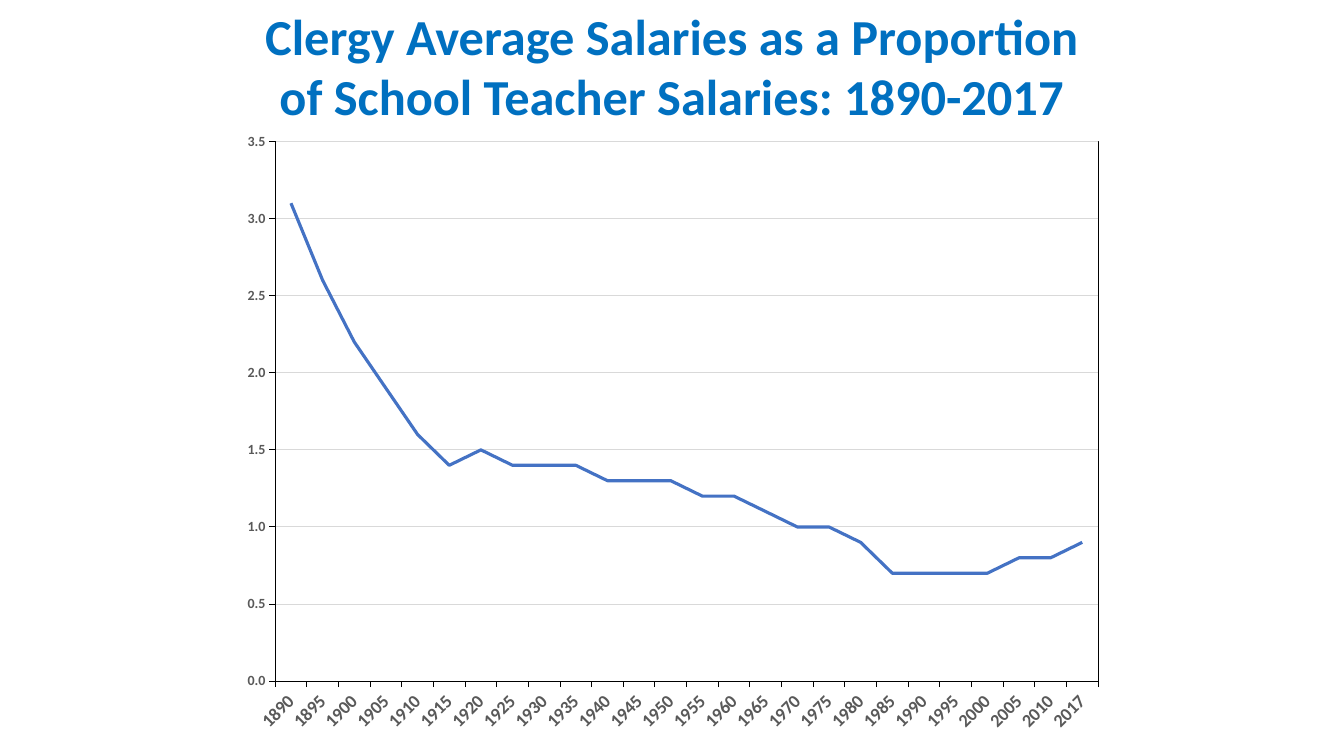
from lxml import etree
from pptx import Presentation
from pptx.chart.data import CategoryChartData
from pptx.dml.color import RGBColor
from pptx.enum.chart import XL_CHART_TYPE, XL_MARKER_STYLE, XL_TICK_MARK
from pptx.enum.text import MSO_ANCHOR, MSO_AUTO_SIZE, PP_ALIGN
from pptx.oxml import parse_xml
from pptx.util import Inches, Pt

LINE_CHART = XL_CHART_TYPE.LINE
NO_MARKER = XL_MARKER_STYLE.NONE
TICK_OUT, TICK_NONE = XL_TICK_MARK.OUTSIDE, XL_TICK_MARK.NONE
CENTER, TOP = PP_ALIGN.CENTER, MSO_ANCHOR.TOP
NO_FIT = MSO_AUTO_SIZE.NONE

TITLE_LINES = ["Clergy Average Salaries as a Proportion",
               "of School Teacher Salaries: 1890-2017"]
YEARS = [str(year) for year in range(1890, 2011, 5)] + ["2017"]
RATIOS = [3.1, 2.6, 2.2, 1.9, 1.6, 1.4, 1.5, 1.4, 1.4, 1.4, 1.3, 1.3, 1.3,
          1.2, 1.2, 1.1, 1.0, 1.0, 0.9, 0.7, 0.7, 0.7, 0.7, 0.8, 0.8, 0.9]

FONT = "Calibri"
TITLE_COLOR, LABEL_COLOR = "0070C0", "595959"
SERIES_COLOR, AXIS_COLOR, GRID_COLOR = "4472C4", "000000", "D9D9D9"
WIDTH, HEIGHT = 13.33, 7.5
LEFT, CHART_TOP = 2.24, 1.32
TITLE_WIDTH, CHART_WIDTH, CHART_HEIGHT = 8.85, 8.73, 6.03
PLOT_SHARES = {"x": 0.056, "y": 0.014, "w": 0.935, "h": 0.888}
AUTO_ROTATION = "-60000000"

CHART_NS = "http://schemas.openxmlformats.org/drawingml/2006/chart"
DRAW_NS = "http://schemas.openxmlformats.org/drawingml/2006/main"


def rgb(color):
    return RGBColor.from_string(color)


def style_font(font, size, color, bold=True):
    font.name, font.size, font.bold = FONT, Pt(size), bold
    font.color.rgb = rgb(color)


def style_line(line, color, width=0.75):
    line.color.rgb, line.width = rgb(color), Pt(width)


def write_lines(frame, lines, size, color, align=CENTER):
    frame.text = "\n".join(lines)
    for paragraph in frame.paragraphs:
        paragraph.alignment = align
        paragraph.space_before = paragraph.space_after = Pt(0)
        style_font(paragraph.runs[0].font, size, color)


def style_axis(axis, size):
    axis.major_tick_mark, axis.minor_tick_mark = TICK_OUT, TICK_NONE
    style_font(axis.tick_labels.font, size, LABEL_COLOR)
    style_line(axis.format.line, AXIS_COLOR)


def frame_plot(plot_area, shares):
    """Fix the inner plot rectangle and outline it in the axis colour."""
    for old in plot_area.findall(f"{{{CHART_NS}}}layout"):
        plot_area.remove(old)
    layout = etree.Element(f"{{{CHART_NS}}}layout")
    manual = etree.SubElement(layout, f"{{{CHART_NS}}}manualLayout")
    settings = {"layoutTarget": "inner", "xMode": "edge", "yMode": "edge", **shares}
    for tag, value in settings.items():
        etree.SubElement(manual, f"{{{CHART_NS}}}{tag}", val=str(value))
    plot_area.insert(0, layout)
    plot_area.append(parse_xml(
        f'<c:spPr xmlns:c="{CHART_NS}" xmlns:a="{DRAW_NS}"><a:noFill/>'
        f'<a:ln w="{Pt(0.75)}"><a:solidFill><a:srgbClr val="{AXIS_COLOR}"/>'
        '</a:solidFill></a:ln></c:spPr>'))


def add_title(slide):
    title = slide.shapes.title
    title.left, title.top = Inches(LEFT), Inches(0)
    title.width, title.height = Inches(TITLE_WIDTH), Inches(CHART_TOP)
    frame = title.text_frame
    frame.word_wrap, frame.auto_size = True, NO_FIT
    frame.vertical_anchor = TOP
    write_lines(frame, TITLE_LINES, 36, TITLE_COLOR)


def add_salary_chart(slide):
    data = CategoryChartData(number_format="0.0")
    data.categories = YEARS
    data.add_series("Series 1", RATIOS)
    chart = slide.shapes.add_chart(
        LINE_CHART, Inches(LEFT), Inches(CHART_TOP),
        Inches(CHART_WIDTH), Inches(CHART_HEIGHT), data).chart
    chart.has_legend = chart.has_title = False
    style_font(chart.font, 10, AXIS_COLOR, bold=False)

    plot = chart.plots[0]
    plot.vary_by_categories = False
    ratio = plot.series[0]
    ratio.smooth = False
    ratio.marker.style = NO_MARKER
    style_line(ratio.format.line, SERIES_COLOR, 2.25)

    year_axis, ratio_axis = chart.category_axis, chart.value_axis
    style_axis(year_axis, 13)
    year_label_body = chart.element.find(
        f".//{{{CHART_NS}}}catAx/{{{CHART_NS}}}txPr/{{{DRAW_NS}}}bodyPr")
    year_label_body.set("rot", AUTO_ROTATION)

    style_axis(ratio_axis, 10)
    ratio_axis.minimum_scale, ratio_axis.maximum_scale = 0, 3.5
    ratio_axis.major_unit = 0.5
    ratio_axis.tick_labels.number_format = "#,##0.0"
    ratio_axis.tick_labels.number_format_is_linked = False
    ratio_axis.has_major_gridlines = True
    style_line(ratio_axis.major_gridlines.format.line, GRID_COLOR)
    frame_plot(chart.element.find(f".//{{{CHART_NS}}}plotArea"), PLOT_SHARES)


def main():
    deck = Presentation()
    deck.slide_width, deck.slide_height = Inches(WIDTH), Inches(HEIGHT)
    slide = deck.slides.add_slide(deck.slide_layouts[5])
    add_title(slide)
    add_salary_chart(slide)
    deck.save("out.pptx")


if __name__ == "__main__":
    main()
